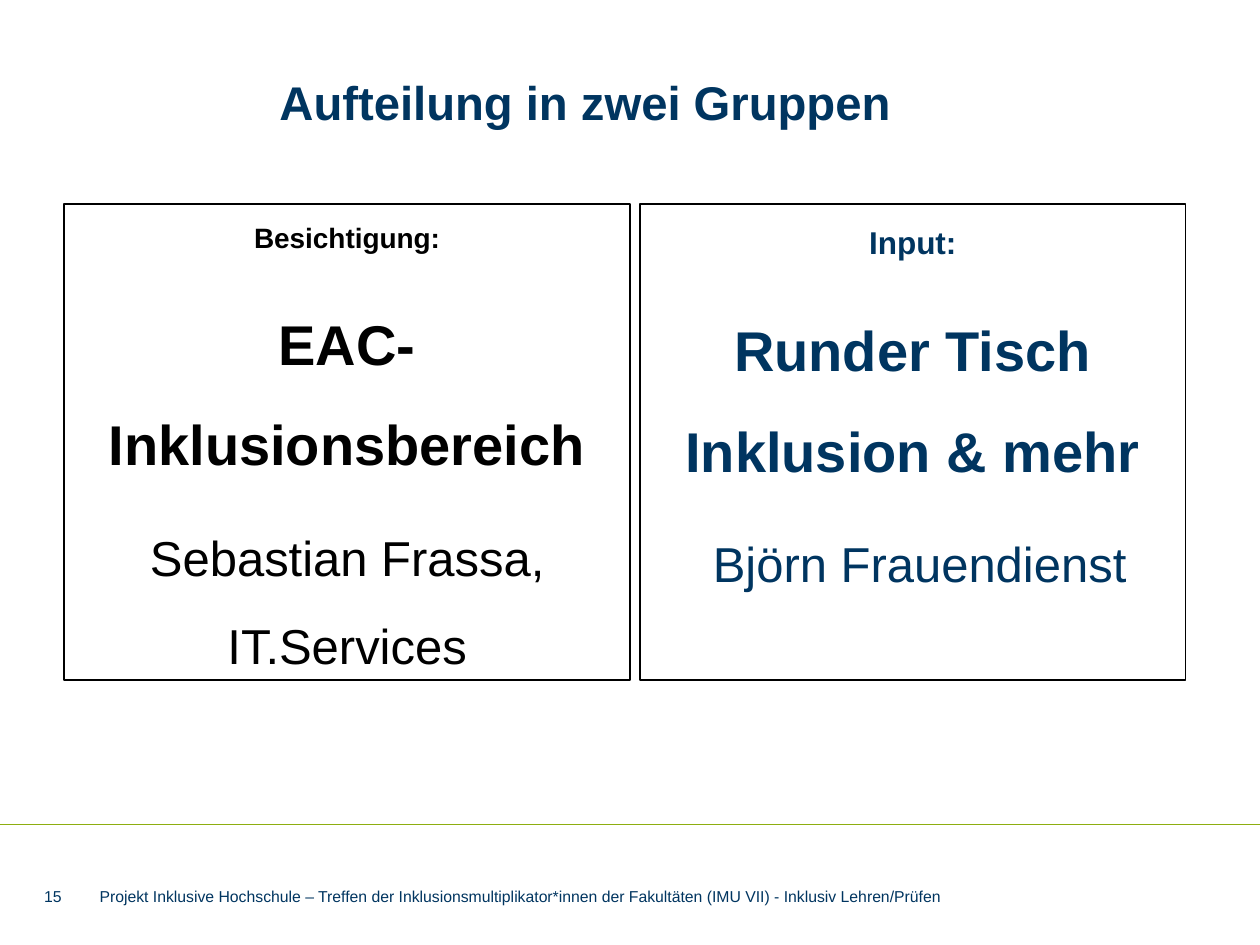
import pptx
import pptx.util
import pptx.dml.color
import pptx.enum.shapes
import pptx.enum.text
import lxml.etree

Inches = pptx.util.Inches
Pt = pptx.util.Pt
RGBColor = pptx.dml.color.RGBColor
ALIGN = pptx.enum.text.PP_ALIGN
ANCHOR = pptx.enum.text.MSO_ANCHOR

NAVY = RGBColor(0x00, 0x35, 0x60)
BLACK = RGBColor(0x00, 0x00, 0x00)
WHITE = RGBColor(0xFF, 0xFF, 0xFF)
GREEN = RGBColor(0x8D, 0xAE, 0x10)


def set_frame(frame, anchor=ANCHOR.TOP):
    frame.word_wrap = True
    frame.vertical_anchor = anchor
    frame.margin_left = frame.margin_right = 0
    frame.margin_top = frame.margin_bottom = 0


def write(para, text, size, color=NAVY, bold=False, align=ALIGN.LEFT,
          lead=None, after=None):
    """Put text in a paragraph; a vertical tab is a line break."""
    para.text = text
    para.alignment = align
    para.line_spacing = lead
    para.space_after = after
    for run in para.runs:
        font = run.font
        font.name = "Arial"
        font.size = Pt(size)
        font.bold = bold
        font.color.rgb = color


def add_label(slide, text, left, top, width, height, anchor=ANCHOR.TOP, **form):
    box = slide.shapes.add_textbox(
        Inches(left), Inches(top), Inches(width), Inches(height))
    set_frame(box.text_frame, anchor)
    write(box.text_frame.paragraphs[0], text, **form)


def add_panel(slide, left, top, width, height, color, lines):
    """Framed box for one group; lines are (text, size, bold)."""
    box = slide.shapes.add_shape(
        pptx.enum.shapes.MSO_SHAPE.RECTANGLE,
        Inches(left), Inches(top), Inches(width), Inches(height))
    box.shadow.inherit = False
    box.fill.solid()
    box.fill.fore_color.rgb = WHITE
    box.line.color.rgb = BLACK
    box.line.width = Pt(1)
    frame = box.text_frame
    set_frame(frame)
    for i, (text, size, bold) in enumerate(lines):
        para = frame.add_paragraph() if i else frame.paragraphs[0]
        write(para, text, size, color, bold, ALIGN.CENTER, 1.5, Pt(12))


def add_footer(slide, left, top, width, height):
    """Green rule with page number and project name below it."""
    rule = slide.shapes.add_connector(
        pptx.enum.shapes.MSO_CONNECTOR.STRAIGHT,
        Inches(left), Inches(top), Inches(left + width), Inches(top))
    rule.line.color.rgb = GREEN
    rule.line.width = Pt(0.5)
    lxml.etree.SubElement(
        rule._element.spPr, pptx.oxml.ns.qn("a:effectLst"))
    row = top + height - 0.16
    add_label(slide, "15", left + 0.35, row, 0.28, 0.16, ANCHOR.MIDDLE, size=9)
    add_label(slide, "Projekt Inklusive Hochschule – Treffen der "
              "Inklusionsmultiplikator*innen der Fakultäten (IMU VII) - "
              "Inklusiv Lehren/Prüfen",
              left + 0.79, row, 6.89, 0.16, ANCHOR.MIDDLE, size=9)


def main():
    deck = pptx.Presentation()
    deck.slide_width = Inches(10)
    deck.slide_height = Inches(7.5)
    slide = deck.slides.add_slide(deck.slide_layouts[6])

    # Title
    add_label(slide, "Aufteilung in zwei Gruppen", 0.51, 0.58, 8.27, 0.68,
              size=27, bold=True, align=ALIGN.CENTER)

    # The two groups
    add_panel(slide, 0.51, 1.62, 4.49, 3.78, BLACK, [
        ("Besichtigung:", 16, True),
        ("EAC-Inklusionsbereich", 32, True),
        ("Sebastian Frassa, IT.Services", 28, False)])
    add_panel(slide, 5.08, 1.62, 4.33, 3.78, NAVY, [
        ("Input:", 18, True),
        ("Runder Tisch\vInklusion & mehr", 32, True),
        (" Björn Frauendienst", 28, False)])

    # Footer
    add_footer(slide, 0, 6.54, 10, 0.65)

    deck.save("out.pptx")


if __name__ == "__main__":
    main()
